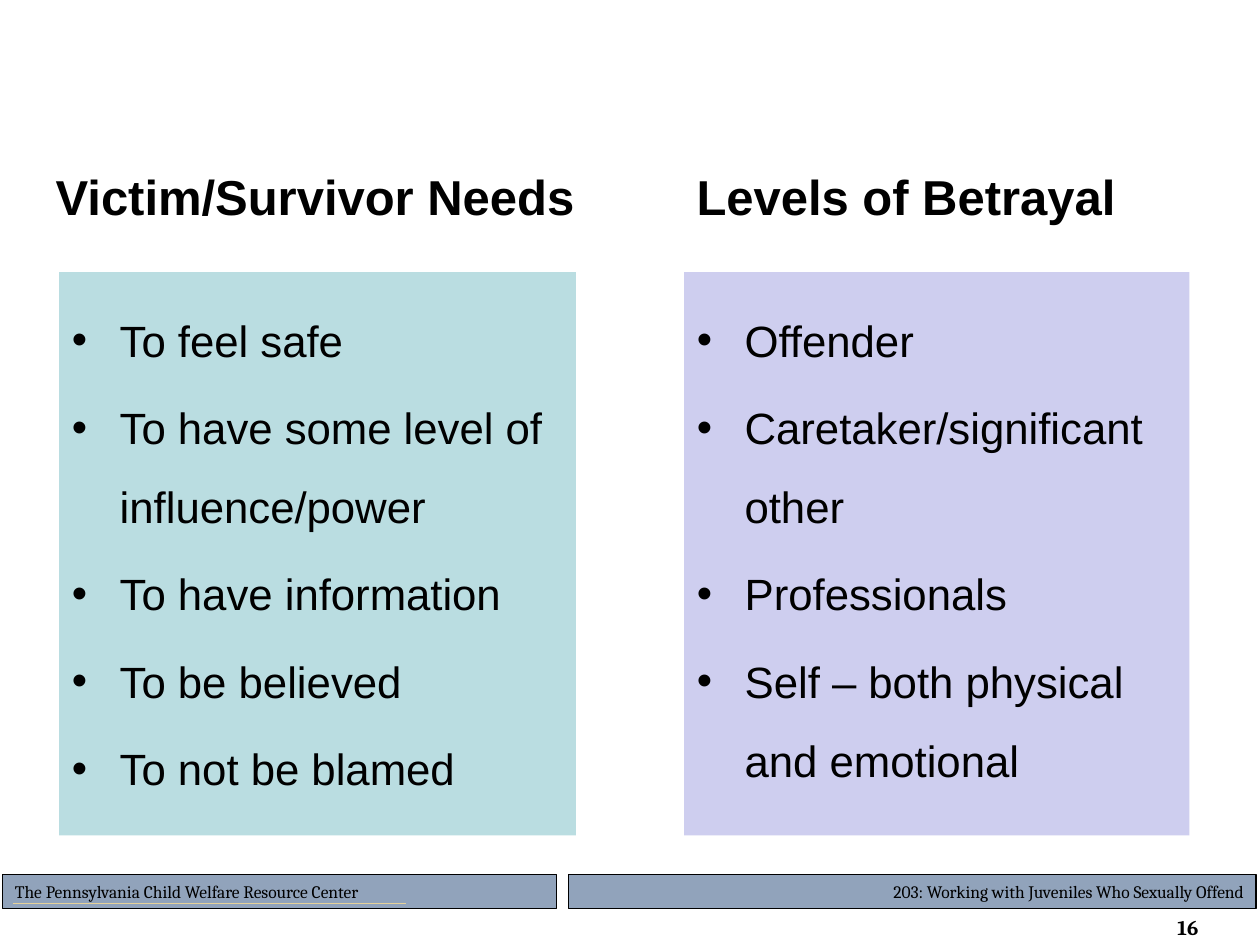
from dataclasses import dataclass

import pptx
import pptx.dml.color
import pptx.enum.shapes
import pptx.enum.text
import pptx.oxml.ns
import pptx.util
from lxml import etree

WIDTH, HEIGHT = 10, 7.5
HEADING_TOP, HEADING_HEIGHT = 1.23, 0.65
PANEL_TOP, PANEL_HEIGHT = 2.16, 4.47
BAR_TOP, BAR_HEIGHT = 6.94, 0.27
COLORS = {
    "text": "000000",
    "needs": "BADDE1",
    "betrayal": "CECEEF",
    "bar": "91A3BB",
    "rule": "E5D199",
}
ALIGN = pptx.enum.text.PP_ALIGN
ANCHOR = pptx.enum.text.MSO_ANCHOR


@dataclass
class Panel:
    left: float
    width: float
    color: str
    items: list[str]


@dataclass
class Bar:
    left: float
    width: float
    border: float
    align: ALIGN
    text: str


PANELS = [
    Panel(0.47, 4.1, "needs", [
        "To feel safe",
        "To have some level of influence/power",
        "To have information",
        "To be believed",
        "To not be blamed",
    ]),
    Panel(5.43, 4.01, "betrayal", [
        "Offender",
        "Caretaker/significant other",
        "Professionals",
        "Self – both physical and emotional",
    ]),
]
BARS = [
    Bar(4.51, 5.46, 0.75, ALIGN.RIGHT,
        "203: Working with Juveniles Who Sexually Offend"),
    Bar(0.02, 4.4, 0.5, ALIGN.LEFT,
        "The Pennsylvania Child Welfare Resource Center"),
]


def rgb(name: str) -> pptx.dml.color.RGBColor:
    return pptx.dml.color.RGBColor.from_string(COLORS[name])


def place(shape, left: float, top: float, width: float, height: float) -> None:
    shape.left, shape.top, shape.width, shape.height = map(
        pptx.util.Inches, (left, top, width, height))


def fill(shape, color: str) -> None:
    shape.fill.solid()
    shape.fill.fore_color.rgb = rgb(color)


def write(shape, text: str, size: float, font: str, align: ALIGN,
          bold: bool = False, anchor: ANCHOR = ANCHOR.MIDDLE) -> None:
    """Set the text of a shape, one paragraph a line, in one style."""
    frame = shape.text_frame
    frame.text = text
    frame.word_wrap = True
    frame.auto_size = pptx.enum.text.MSO_AUTO_SIZE.NONE
    frame.vertical_anchor = anchor
    for para in frame.paragraphs:
        para.alignment = align
        for span in para.runs:
            span.font.size = pptx.util.Pt(size)
            span.font.name = font
            span.font.bold = bold
            span.font.color.rgb = rgb("text")


def add_bullet(para) -> None:
    properties = para._p.get_or_add_pPr()
    indent = pptx.util.Inches(0.38)
    properties.set("marL", str(indent))
    properties.set("indent", str(-indent))
    bullet = etree.SubElement(properties, pptx.oxml.ns.qn("a:buChar"))
    bullet.set("char", "•")


def fill_panel(body, panel: Panel) -> None:
    place(body, panel.left, PANEL_TOP, panel.width, PANEL_HEIGHT)
    fill(body, panel.color)
    write(body, "\n".join(panel.items), 25, "Arial", ALIGN.LEFT,
          anchor=ANCHOR.TOP)
    body.text_frame.margin_top = pptx.util.Inches(0.12)
    for index, para in enumerate(body.text_frame.paragraphs):
        add_bullet(para)
        para.line_spacing = 1.5
        para.space_before = pptx.util.Pt(5 if index else 0)


def add_bar(page, bar: Bar) -> None:
    box = page.shapes.add_shape(
        pptx.enum.shapes.MSO_SHAPE.RECTANGLE, 0, 0, 0, 0)
    place(box, bar.left, BAR_TOP, bar.width, BAR_HEIGHT)
    box.shadow.inherit = False
    fill(box, "bar")
    box.line.color.rgb = rgb("text")
    box.line.width = pptx.util.Pt(bar.border)
    write(box, bar.text, 10, "Cambria", bar.align)


def add_rule(page, left: float, right: float, top: float) -> None:
    rule = page.shapes.add_connector(
        pptx.enum.shapes.MSO_CONNECTOR.STRAIGHT,
        *map(pptx.util.Inches, (left, top, right, top)))
    rule.line.color.rgb = rgb("rule")
    rule.line.width = pptx.util.Pt(0.75)
    etree.SubElement(rule._element.spPr, pptx.oxml.ns.qn("a:effectLst"))


def main() -> None:
    deck = pptx.Presentation()
    deck.slide_width = pptx.util.Inches(WIDTH)
    deck.slide_height = pptx.util.Inches(HEIGHT)
    page = deck.slides.add_slide(deck.slide_layouts.get_by_name("Two Content"))
    title, *bodies = page.placeholders

    # Headings
    place(title, 0.13, HEADING_TOP, 4.74, HEADING_HEIGHT)
    write(title, "Victim/Survivor Needs", 28, "Arial", ALIGN.CENTER, bold=True)
    heading = page.shapes.add_textbox(0, 0, 0, 0)
    place(heading, PANELS[1].left, HEADING_TOP, 3.7, HEADING_HEIGHT)
    write(heading, "Levels of Betrayal", 28, "Arial", ALIGN.LEFT, bold=True)

    # Bulleted panels
    for body, panel in zip(bodies, PANELS):
        fill_panel(body, panel)

    # Footer bars and page number
    for bar in BARS:
        add_bar(page, bar)
    add_rule(page, 0.1, 3.22, 7.17)
    number = page.shapes.add_textbox(0, 0, 0, 0)
    place(number, 8.81, 7.21, 0.8, 0.3)
    write(number, "16", 12, "Cambria", ALIGN.RIGHT, bold=True)

    deck.save("out.pptx")


if __name__ == "__main__":
    main()
